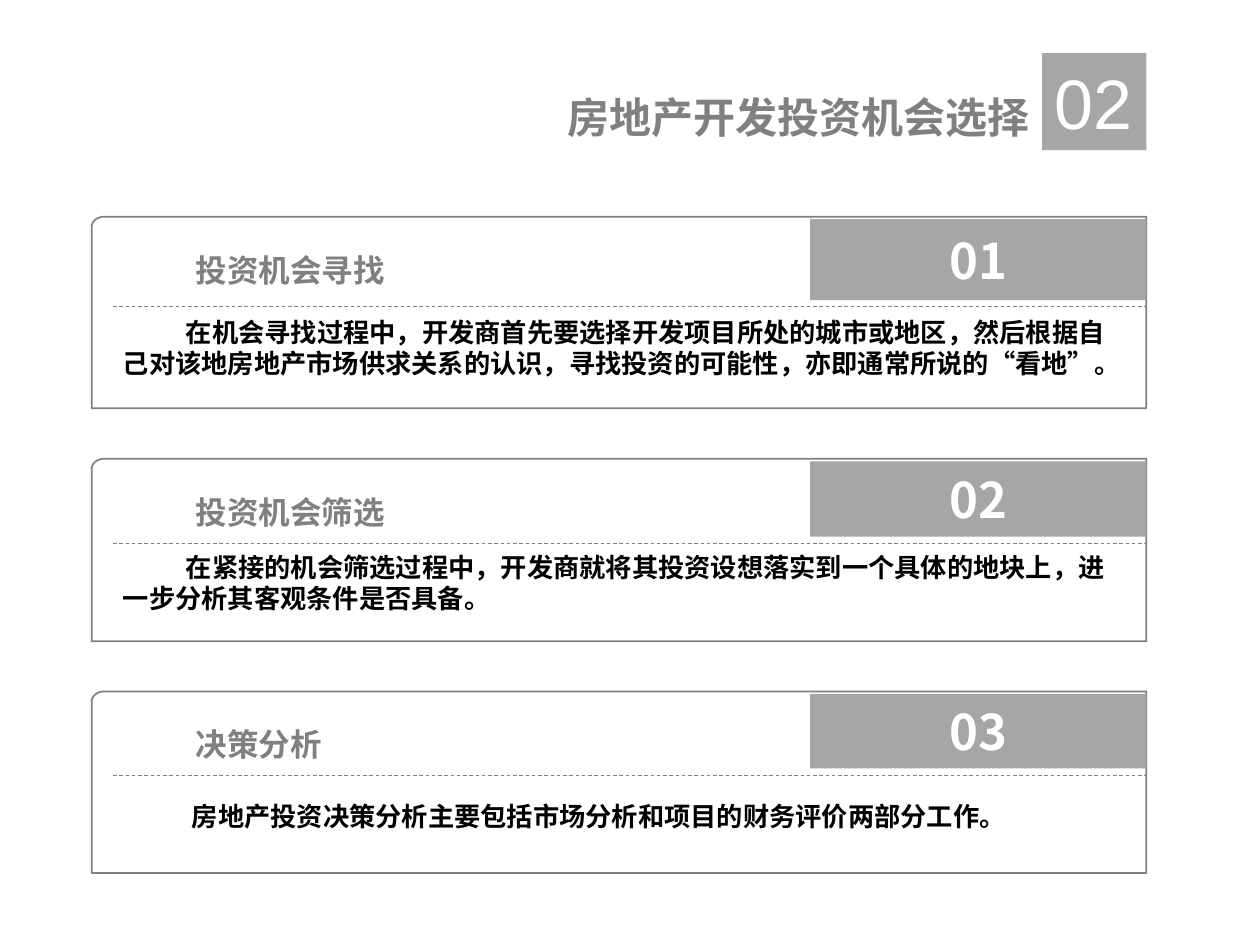
from math import cos, pi, sin

from lxml.etree import SubElement
from pptx import Presentation
from pptx.dml.color import RGBColor
from pptx.enum.dml import MSO_LINE
from pptx.enum.shapes import MSO_CONNECTOR, MSO_SHAPE
from pptx.enum.text import MSO_ANCHOR as Anchor, PP_ALIGN as Align
from pptx.oxml.ns import qn
from pptx.util import Cm, Pt

GRAY = RGBColor(0x80, 0x80, 0x80)
SILVER = RGBColor(0xA6, 0xA6, 0xA6)
WHITE = RGBColor(0xFF, 0xFF, 0xFF)
BLACK = RGBColor(0x00, 0x00, 0x00)
HAN = "Noto Sans CJK SC"
LATIN = "Arial"

LEFT, WIDTH = 1.85, 21.26
# top, height, rule offset, tag height, body offset, heading, body
CARDS = [
    (4.37, 3.86, 1.8, 1.63, 1.88, "投资机会寻找",
     "在机会寻找过程中，开发商首先要选择开发项目所处的城市或地区，然后根据自己对该地房地产市场供求关系的认识，"
     "寻找投资的可能性，亦即通常所说的“看地”。"),
    (9.25, 3.68, 1.7, 1.52, 1.73, "投资机会筛选",
     "在紧接的机会筛选过程中，开发商就将其投资设想落实到一个具体的地块上，进一步分析其客观条件是否具备。"),
    (13.94, 3.66, 1.7, 1.5, 2.06, "决策分析",
     " 房地产投资决策分析主要包括市场分析和项目的财务评价两部分工作。"),
]


def write(shape, text, size, color, font=HAN, bold=True, align=Align.LEFT,
          indent=0, anchor=Anchor.TOP, wrap=True):
    frame = shape.text_frame
    frame.word_wrap = wrap
    frame.vertical_anchor = anchor
    para = frame.paragraphs[0]
    para.alignment = align
    if indent:
        props = para._p.get_or_add_pPr()
        props.set("marL", "0")
        props.set("indent", str(Cm(indent)))
    run = para.add_run()
    run.text = text
    run.font.size = Pt(size)
    run.font.bold = bold
    run.font.color.rgb = color
    run.font.name = font
    SubElement(run._r.get_or_add_rPr(), qn("a:ea")).set("typeface", HAN)


def add_text(slide, x, y, w, h, text, size, color, **style):
    box = slide.shapes.add_textbox(Cm(x), Cm(y), Cm(w), Cm(h))
    write(box, text, size, color, **style)


def add_block(slide, x, y, w, h, text, size, **style):
    block = slide.shapes.add_shape(MSO_SHAPE.RECTANGLE, Cm(x), Cm(y), Cm(w), Cm(h))
    block.shadow.inherit = False
    block.fill.solid()
    block.fill.fore_color.rgb = SILVER
    block.line.fill.background()
    write(block, text, size, WHITE, **style)


def add_frame(slide, x, y, w, h, rx=0.25, ry=0.2, steps=8):
    """Outline a box whose top left corner alone is rounded."""
    turns = [pi / 2 * i / steps for i in range(steps + 1)]
    arc = [(x + rx - rx * cos(t), y + ry - ry * sin(t)) for t in turns]
    points = [(x + w, y), (x + w, y + h), (x, y + h)] + arc
    pen = slide.shapes.build_freeform(Cm(arc[-1][0]), Cm(y))
    pen.add_line_segments([(Cm(a), Cm(b)) for a, b in points], close=True)
    frame = pen.convert_to_shape()
    frame.shadow.inherit = False
    frame.fill.background()
    frame.line.color.rgb = GRAY
    frame.line.width = Pt(1)


def add_rule(slide, x, y, w):
    rule = slide.shapes.add_connector(MSO_CONNECTOR.STRAIGHT, Cm(x), Cm(y), Cm(x + w), Cm(y))
    rule.line.color.rgb = GRAY
    rule.line.width = Pt(0.5)
    rule.line.dash_style = MSO_LINE.DASH
    SubElement(rule._element.spPr, qn("a:effectLst"))


def add_header(slide, x, y, w, h):
    side = 2.1
    add_text(slide, x, y + 0.66, w - side, 1.27, "房地产开发投资机会选择", 24, GRAY,
             align=Align.RIGHT)
    add_block(slide, x + w - side, y, side, h, "02", 40, font=LATIN, bold=False, wrap=False)


def add_card(slide, x, y, w, h, num, rule, tag, drop, head, body):
    pad, wide = 0.38, 6.78
    add_frame(slide, x, y, w, h)
    add_rule(slide, x + 0.43, y + rule, w - 0.43)
    add_text(slide, x + pad, y + 0.56, w - wide - pad, 1.02, head, 18, GRAY,
             align=Align.JUSTIFY, indent=1.47)
    add_block(slide, x + w - wide, y + 0.05, wide, tag, f"{num:02}", 28,
              align=Align.CENTER, anchor=Anchor.MIDDLE)
    add_text(slide, x + pad, y + drop, 20.7, 1.55, body, 15, BLACK,
             font=LATIN, indent=1.27)


def main():
    deck = Presentation()
    deck.slide_width, deck.slide_height = Cm(25.4), Cm(19.05)
    slide = deck.slides.add_slide(deck.slide_layouts[6])
    add_header(slide, 10.97, 1.07, 12.14, 1.96)
    for num, (top, high, *rest) in enumerate(CARDS, 1):
        add_card(slide, LEFT, top, WIDTH, high, num, *rest)
    deck.save("out.pptx")


if __name__ == "__main__":
    main()
